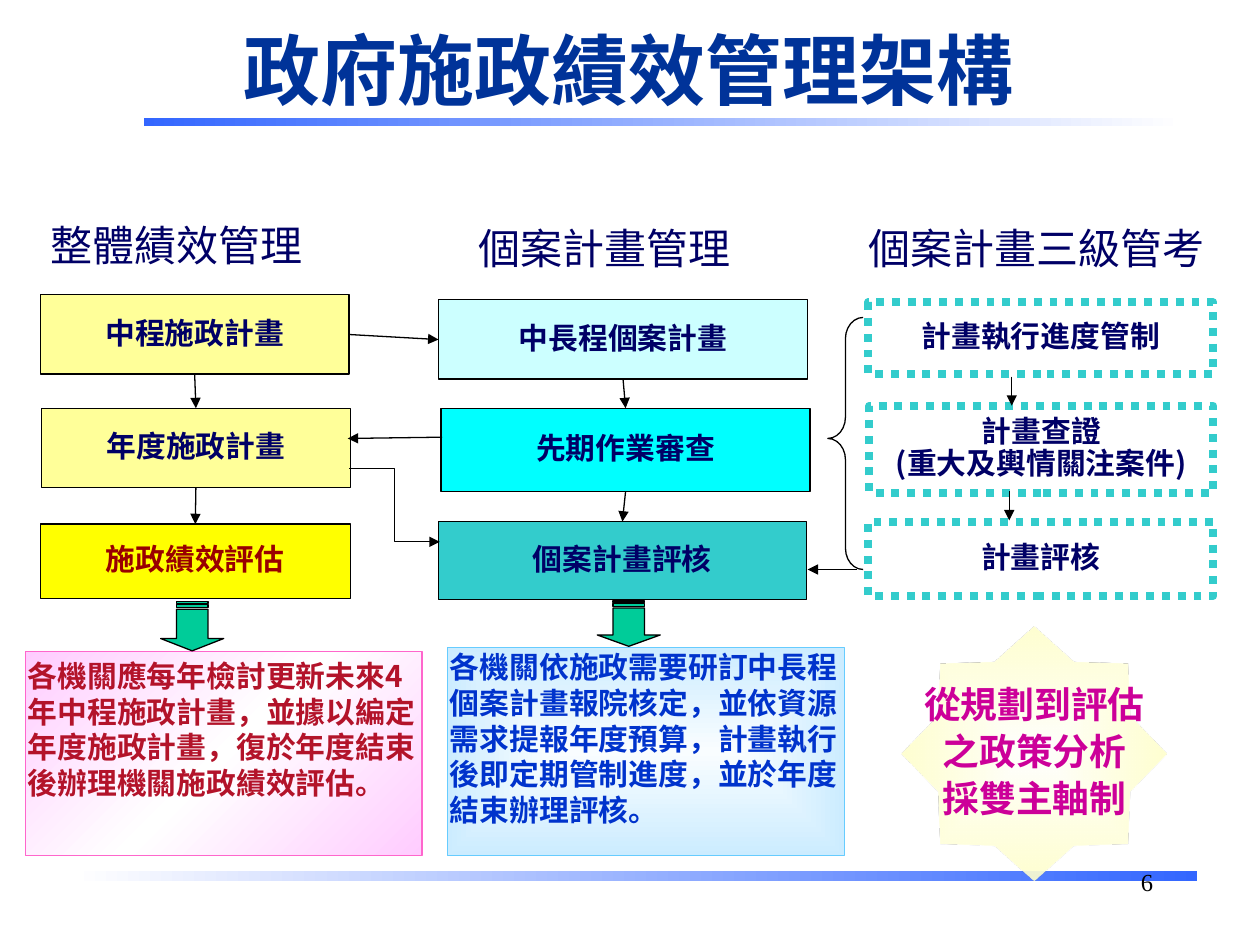
from dataclasses import dataclass
from typing import Optional

from lxml.etree import SubElement
from pptx import Presentation
from pptx.dml.color import RGBColor
from pptx.enum.dml import MSO_LINE
from pptx.enum.shapes import MSO_CONNECTOR as Link, MSO_SHAPE as Kind
from pptx.enum.text import MSO_ANCHOR as Anchor, PP_ALIGN as Align
from pptx.oxml import parse_xml
from pptx.oxml.ns import nsdecls, qn
from pptx.util import Inches, Pt

SANS, SERIF = "Noto Sans CJK SC", "Times New Roman"
BLACK = RGBColor(0, 0, 0)
WHITE = RGBColor(0xFF, 0xFF, 0xFF)
BLUE = RGBColor(0x33, 0x66, 0xFF)
TITLE_BLUE = RGBColor(0x00, 0x33, 0x99)
NAVY = RGBColor(0x00, 0x00, 0x66)
DARK_RED = RGBColor(0x99, 0x00, 0x00)
CRIMSON = RGBColor(0xB3, 0x13, 0x2A)
NOTE_BLUE = RGBColor(0x00, 0x33, 0xCC)
MAGENTA = RGBColor(0xCC, 0x00, 0x99)
PALE_YELLOW = RGBColor(0xFF, 0xFF, 0x99)
YELLOW = RGBColor(0xFF, 0xFF, 0x00)
CREAM = RGBColor(0xFF, 0xFF, 0xCC)
PALE_CYAN = RGBColor(0xCC, 0xFF, 0xFF)
CYAN = RGBColor(0x00, 0xFF, 0xFF)
TEAL = RGBColor(0x33, 0xCC, 0xCC)
GREEN = RGBColor(0x00, 0xCC, 0x99)
PINK = RGBColor(0xFF, 0xCC, 0xFF)
PINK_EDGE = RGBColor(0xFF, 0x66, 0xCC)
ICE = RGBColor(0xF9, 0xFD, 0xFF)
SKY = RGBColor(0xCC, 0xEC, 0xFF)
SKY_EDGE = RGBColor(0x66, 0xCC, 0xFF)

TIGHT = (0.02, 0.01, 0.02, 0.01)
ROOMY = (0.1, 0.05, 0.1, 0.05)


@dataclass
class TextStyle:
    size: float
    color: RGBColor
    bold: bool = True
    font: str = SANS
    align: Align = Align.CENTER
    anchor: Anchor = Anchor.MIDDLE
    spacing: float = 0.9
    gap: float = 0
    wrap: bool = True
    insets: tuple = TIGHT


@dataclass
class Step:
    name: str
    at: tuple
    fill: Optional[RGBColor]
    color: RGBColor = NAVY


@dataclass
class Arrow:
    start: tuple
    end: tuple
    begin_at: Optional[tuple] = None  # (step name, side)
    end_at: Optional[tuple] = None
    kind: Link = Link.STRAIGHT


# Three columns of steps
STEPS = [
    Step("中程施政計畫", (0.32, 2.34, 2.45, 0.63), PALE_YELLOW),
    Step("年度施政計畫", (0.33, 3.24, 2.45, 0.63), PALE_YELLOW),
    Step("施政績效評估", (0.32, 4.16, 2.46, 0.59), YELLOW, DARK_RED),
    Step("中長程個案計畫", (3.48, 2.38, 2.93, 0.63), PALE_CYAN),
    Step("先期作業審查", (3.5, 3.24, 2.93, 0.66), CYAN),
    Step("個案計畫評核", (3.48, 4.14, 2.92, 0.62), TEAL),
    Step("計畫執行進度管制", (6.89, 2.4, 2.74, 0.57), None),
    Step("計畫查證\n(重大及輿情關注案件)", (6.9, 3.22, 2.73, 0.69), None),
    Step("計畫評核", (6.89, 4.14, 2.74, 0.59), None),
]
HEADINGS = [
    ("整體績效管理", (0, 1.78, 2.8, 0.38)),
    ("個案計畫管理", (3.33, 1.8, 2.93, 0.39)),
    ("個案計畫三級管考", (6.51, 1.8, 3.43, 0.38)),
]
ARROWS = [
    Arrow((1.53, 2.97), (1.53, 3.24), ("中程施政計畫", 2), ("年度施政計畫", 0)),
    Arrow((1.53, 3.87), (1.53, 4.16), ("年度施政計畫", 2), ("施政績效評估", 0)),
    Arrow((4.94, 3.01), (4.94, 3.24), ("中長程個案計畫", 2), ("先期作業審查", 0)),
    Arrow((4.94, 3.9), (4.94, 4.14), ("先期作業審查", 2), ("個案計畫評核", 0)),
    Arrow((2.77, 2.66), (3.48, 2.7), ("中程施政計畫", 3), ("中長程個案計畫", 1)),
    Arrow((3.51, 3.47), (2.76, 3.48)),
    Arrow((6.8, 4.52), (6.41, 4.52)),
    Arrow((8.03, 2.99), (8.03, 3.22)),
    Arrow((8.01, 3.9), (8.01, 4.13)),
    Arrow((2.77, 3.72), (3.49, 4.3), kind=Link.ELBOW),
]
BLOCK_ARROWS = [(1.33, 4.72, 0.39, 0.5), (4.81, 4.7, 0.36, 0.5)]


def write(box, text: str, style: TextStyle) -> None:
    frame = box.text_frame
    left, top, right, bottom = map(Inches, style.insets)
    layout = {"word_wrap": style.wrap, "vertical_anchor": style.anchor, "margin_left": left,
              "margin_top": top, "margin_right": right, "margin_bottom": bottom}
    for name, value in layout.items():
        setattr(frame, name, value)
    for index, line in enumerate(text.split("\n")):
        para = frame.paragraphs[0] if index == 0 else frame.add_paragraph()
        para.alignment, para.line_spacing = style.align, style.spacing
        if index and style.gap:
            para.space_before = Pt(style.gap)
        span = para.add_run()
        span.text = line
        span.font.color.rgb = style.color
        for name, value in {"size": Pt(style.size), "bold": style.bold, "name": style.font}.items():
            setattr(span.font, name, value)
        SubElement(span._r.get_or_add_rPr(), qn("a:ea"), typeface=style.font)


def add_label(page, at: tuple, text: str, style: TextStyle) -> None:
    write(page.shapes.add_textbox(*map(Inches, at)), text, style)


def add_box(page, at: tuple, fill=None, line=None, width: float = 0.75, kind=Kind.RECTANGLE):
    box = page.shapes.add_shape(kind, *map(Inches, at))
    box.shadow.inherit = False
    if fill is None:
        box.fill.background()
    else:
        box.fill.solid()
        box.fill.fore_color.rgb = fill
    if line is None:
        box.line.fill.background()
    else:
        box.line.color.rgb = line
        box.line.width = Pt(width)
    return box


def shade(box, colors: list, angle: Optional[int] = None, last_alpha: int = 100) -> None:
    """Evenly spaced gradient: linear at an angle, or from the centre outwards."""
    last = len(colors) - 1
    stops = "".join(
        f'<a:gs pos="{100000 * i // last}"><a:srgbClr val="{color}">'
        f'<a:alpha val="{1000 * (last_alpha if i == last else 100)}"/></a:srgbClr></a:gs>'
        for i, color in enumerate(colors))
    if angle is None:
        direction = ('<a:path path="rect"><a:fillToRect l="50000" t="50000" '
                     'r="50000" b="50000"/></a:path>')
    else:
        direction = f'<a:lin ang="{angle * 60000}" scaled="0"/>'
    gradient = parse_xml(f'<a:gradFill {nsdecls("a")} rotWithShape="1"><a:gsLst>{stops}'
                         f'</a:gsLst>{direction}</a:gradFill>')
    properties = box._element.spPr
    properties.replace(properties.find(qn("a:solidFill")), gradient)


def add_arrow(page, arrow: Arrow, boxes: dict) -> None:
    ends = map(Inches, arrow.start + arrow.end)
    link = page.shapes.add_connector(arrow.kind, *ends)
    if arrow.begin_at:
        link.begin_connect(boxes[arrow.begin_at[0]], arrow.begin_at[1])
    if arrow.end_at:
        link.end_connect(boxes[arrow.end_at[0]], arrow.end_at[1])
    link.line.color.rgb = BLACK
    link.line.width = Pt(0.75)
    SubElement(link.line._get_or_add_ln(), qn("a:tailEnd"), type="triangle")
    SubElement(link._element.spPr, qn("a:effectLst"))


def main() -> None:
    deck = Presentation()
    deck.slide_width, deck.slide_height = Inches(10), Inches(7.5)
    page = deck.slides.add_slide(deck.slide_layouts[6])

    # Title, rules and page number
    shade(add_box(page, (0.58, 6.91, 8.92, 0.08), WHITE), [WHITE, BLUE], 0)
    shade(add_box(page, (1.14, 0.94, 8.25, 0.06), BLUE), [BLUE, WHITE], 0)
    add_label(page, (0.68, 0.23, 8.62, 0.72), "政府施政績效管理架構",
              TextStyle(44, TITLE_BLUE, insets=ROOMY))

    # Columns of steps
    for text, at in HEADINGS:
        add_label(page, at, text, TextStyle(24, NAVY, bold=False, anchor=Anchor.TOP))
    boxes = {}
    for step in STEPS:
        dotted = step.fill is None
        box = add_box(page, step.at, step.fill, TEAL if dotted else BLACK, 4.5 if dotted else 0.75)
        if dotted:
            box.line.dash_style = MSO_LINE.ROUND_DOT
        write(box, step.name, TextStyle(17, step.color, wrap=False))
        boxes[step.name] = box
    brace = add_box(page, (6.57, 2.52, 0.28, 2), None, BLACK, kind=Kind.LEFT_BRACE)
    brace.adjustments[0], brace.adjustments[1] = 0.6, 0.48
    for arrow in ARROWS:
        add_arrow(page, arrow, boxes)

    # Explanations below the first two columns
    note = add_box(page, (0.2, 5.17, 3.15, 1.62), PINK, PINK_EDGE)
    shade(note, [PINK, WHITE, PINK], 45)
    write(note, "各機關應每年檢討更新未來4年中程施政計畫，並據以編定年度施政計畫，復於年度結束後辦理機關施政績效評估。",
          TextStyle(17, CRIMSON, align=Align.LEFT, anchor=Anchor.TOP, spacing=1.0,
                    insets=(0.02, 0.05, 0.02, 0.05)))
    note = add_box(page, (3.55, 5.14, 3.15, 1.65), SKY, SKY_EDGE)
    shade(note, [ICE, SKY])
    write(note, "各機關依施政需要研訂中長程個案計畫報院核定，並依資源需求提報年度預算，計畫執行後即定期管制進度，並於年度結束辦理評核。",
          TextStyle(17, NOTE_BLUE, align=Align.LEFT, anchor=Anchor.TOP, spacing=1.0))
    for at in BLOCK_ARROWS:
        block = add_box(page, at, GREEN, BLACK, kind=Kind.STRIPED_RIGHT_ARROW)
        block.rotation = 90
        block.adjustments[0], block.adjustments[1] = 0.5, 0.25

    # Conclusion star
    star = add_box(page, (7.16, 4.97, 2.1, 2.02), CREAM, kind=Kind.STAR_8_POINT)
    star.adjustments[0] = 0.39
    shade(star, [WHITE, CREAM], last_alpha=90)
    write(star, "從規劃到評估\n之政策分析\n採雙主軸制",
          TextStyle(21, MAGENTA, gap=4.2, wrap=False, insets=ROOMY))

    add_label(page, (7.17, 6.83, 2.08, 0.5), "6",
              TextStyle(14, BLACK, bold=False, font=SERIF, align=Align.RIGHT,
                        anchor=Anchor.TOP, spacing=1.0, insets=ROOMY))
    deck.save("out.pptx")


if __name__ == "__main__":
    main()
